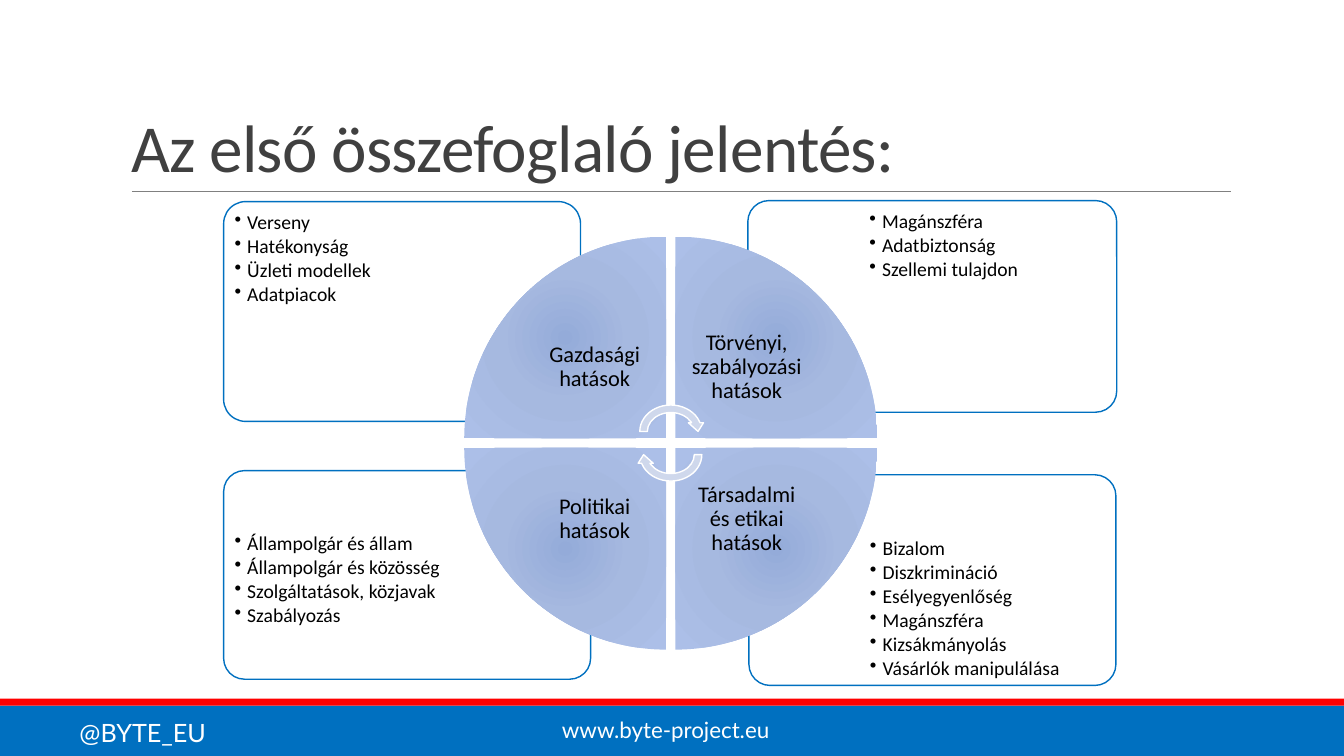
from dataclasses import dataclass

from lxml.etree import SubElement
from pptx import Presentation
from pptx.dml.color import RGBColor
from pptx.enum.shapes import MSO_CONNECTOR, MSO_SHAPE
from pptx.enum.text import MSO_ANCHOR, PP_ALIGN
from pptx.oxml import parse_xml
from pptx.oxml.ns import nsdecls, qn
from pptx.util import Pt

BLUE, RED, WHITE, BLACK = "0070C0", "FF0000", "FFFFFF", "000000"
WEDGE_STOPS = ((0, "94ABD9"), (45, "A6B9E0"), (100, "ACBFE8"))
ARROW_STOPS = ((0, "C2CDE5"), (45, "CFD8EC"), (100, "D2DBF1"))


@dataclass
class Quadrant:
    label: str
    items: list[str]
    col: int
    row: int
    rotation: int
    panel: tuple[float, float, float, float]


QUADRANTS = [
    Quadrant("Társadalmi és etikai hatások",
             ["Bizalom", "Diszkrimináció", "Esélyegyenlőség", "Magánszféra",
              "Kizsákmányolás", "Vásárlók manipulálása"],
             1, 1, 180, (535, 339.1, 262.1, 150.5)),
    Quadrant("Politikai hatások",
             ["Állampolgár és állam", "Állampolgár és közösség",
              "Szolgáltatások, közjavak", "Szabályozás"],
             0, 1, 270, (159.8, 336.2, 262.1, 149)),
    Quadrant("Törvényi, szabályozási hatások",
             ["Magánszféra", "Adatbiztonság", "Szellemi tulajdon"],
             1, 0, 90, (534.2, 143.3, 263.5, 151.2)),
    Quadrant("Gazdasági hatások",
             ["Verseny", "Hatékonyság", "Üzleti modellek", "Adatpiacok"],
             0, 0, 0, (159.8, 144, 254.9, 157)),
]


def rgb(value: str) -> RGBColor:
    return RGBColor.from_string(value)


def write(tf, lines, *, size, color=BLACK, font="Calibri", align=PP_ALIGN.LEFT,
          anchor=MSO_ANCHOR.TOP, inset=None, spacing=None, after=None,
          bullet=False, tracking=None) -> None:
    tf.word_wrap = True
    tf.vertical_anchor = anchor
    if inset is not None:
        tf.margin_left = tf.margin_right = Pt(inset)
        tf.margin_top = tf.margin_bottom = Pt(inset)
    for i, line in enumerate(lines):
        p = tf.add_paragraph() if i else tf.paragraphs[0]
        p.alignment = align
        if spacing:
            p.line_spacing = spacing
        if after is not None:
            p.space_after = Pt(after)
        if bullet:
            pPr = p._p.get_or_add_pPr()
            pPr.set("marL", str(Pt(9)))
            pPr.set("indent", str(-Pt(9)))
            SubElement(pPr, qn("a:buChar")).set("char", "•")
        r = p.add_run()
        r.text = line
        r.font.name, r.font.size = font, Pt(size)
        r.font.color.rgb = rgb(color)
        if tracking is not None:
            r._r.get_or_add_rPr().set("spc", str(tracking))


def add_text(s, box, lines, **fmt) -> None:
    tb = s.shapes.add_textbox(*map(Pt, box))
    write(tb.text_frame, lines, **fmt)


def add_shape(s, kind, box, *, fill=None, stops=None, line=None, rotation=0):
    sp = s.shapes.add_shape(kind, *map(Pt, box))
    sp.rotation = rotation
    sp.shadow.inherit = False
    if fill:
        sp.fill.solid()
        sp.fill.fore_color.rgb = rgb(fill)
    if stops:
        gs = "".join(f'<a:gs pos="{pos * 1000}"><a:srgbClr val="{c}"/></a:gs>'
                     for pos, c in stops)
        grad = parse_xml(
            f'<a:gradFill {nsdecls("a")} rotWithShape="1"><a:gsLst>{gs}</a:gsLst>'
            '<a:path path="circle"><a:fillToRect l="100000" t="100000" '
            'r="100000" b="100000"/></a:path></a:gradFill>')
        sp._element.spPr.find(qn("a:prstGeom")).addnext(grad)
    if line:
        sp.line.color.rgb = rgb(line)
        sp.line.width = Pt(1)
    else:
        sp.line.fill.background()
    return sp


def add_panel(s, q: Quadrant) -> None:
    x, y, w, h = q.panel
    sp = add_shape(s, MSO_SHAPE.ROUNDED_RECTANGLE, q.panel, fill=WHITE, line=BLUE)
    sp.adjustments[0] = 0.1
    color = sp._element.spPr.find(qn("a:solidFill"))[0]
    SubElement(color, qn("a:alpha")).set("val", "90000")
    pad = 3.6
    box = (x + 0.3 * w * q.col + pad, y + 0.25 * h * q.row + pad,
           0.7 * w - 2 * pad, 0.75 * h - 2 * pad)
    add_text(s, box, q.items, size=14, inset=4.2, spacing=0.9, after=2, bullet=True)


def add_wedge(s, q: Quadrant) -> None:
    size, step, label = 144.2, 150.8, 102
    x, y = 331.6 + q.col * step, 169 + q.row * step
    add_shape(s, MSO_SHAPE.PIE_WEDGE, (x, y, size, size),
              stops=WEDGE_STOPS, rotation=q.rotation)
    shift = size - label
    box = (x + shift * (1 - q.col), y + shift * (1 - q.row), label, label)
    add_text(s, box, [q.label], size=16, align=PP_ALIGN.CENTER,
             anchor=MSO_ANCHOR.MIDDLE, inset=9, spacing=0.9)


def main() -> None:
    prs = Presentation()
    prs.slide_width, prs.slide_height = Pt(960), Pt(540)
    s = prs.slides.add_slide(prs.slide_layouts[5])

    # Footer bands and rule under the title
    add_shape(s, MSO_SHAPE.RECTANGLE, (0, 504, 960, 36), fill=BLUE)
    add_shape(s, MSO_SHAPE.RECTANGLE, (0, 499, 960, 5), fill=RED)
    rule = s.shapes.add_connector(MSO_CONNECTOR.STRAIGHT,
                                  Pt(94.3), Pt(136.8), Pt(879), Pt(136.8))
    rule.line.color.rgb = rgb("808080")
    rule.line.width = Pt(0.5)
    SubElement(rule._element.spPr, qn("a:effectLst"))
    add_text(s, (49.7, 509, 151, 29), ["@BYTE_EU"],
             size=18, color=WHITE, font="Lato")
    add_text(s, (303, 508.3, 345, 27), ["www.byte-project.eu"],
             size=16, color=WHITE, font="Lato", align=PP_ALIGN.CENTER)

    # Title
    title = s.shapes.title
    title.left, title.top, title.width, title.height = map(Pt, (86.4, 22.3, 792, 114.5))
    write(title.text_frame, ["Az első összefoglaló jelentés:"], size=48,
          color="404040", anchor=MSO_ANCHOR.BOTTOM, spacing=0.85, tracking=-50)

    # Panels behind the circle
    for q in QUADRANTS:
        add_panel(s, q)

    # Circle of four wedges
    for q in QUADRANTS:
        add_wedge(s, q)

    # Cycle arrows in the centre
    for y, rotation in ((286.6, 0), (303.1, 180)):
        add_shape(s, MSO_SHAPE.CIRCULAR_ARROW, (454.3, y, 49.7, 43.2),
                  stops=ARROW_STOPS, line=WHITE, rotation=rotation)

    prs.save("out.pptx")


if __name__ == "__main__":
    main()
